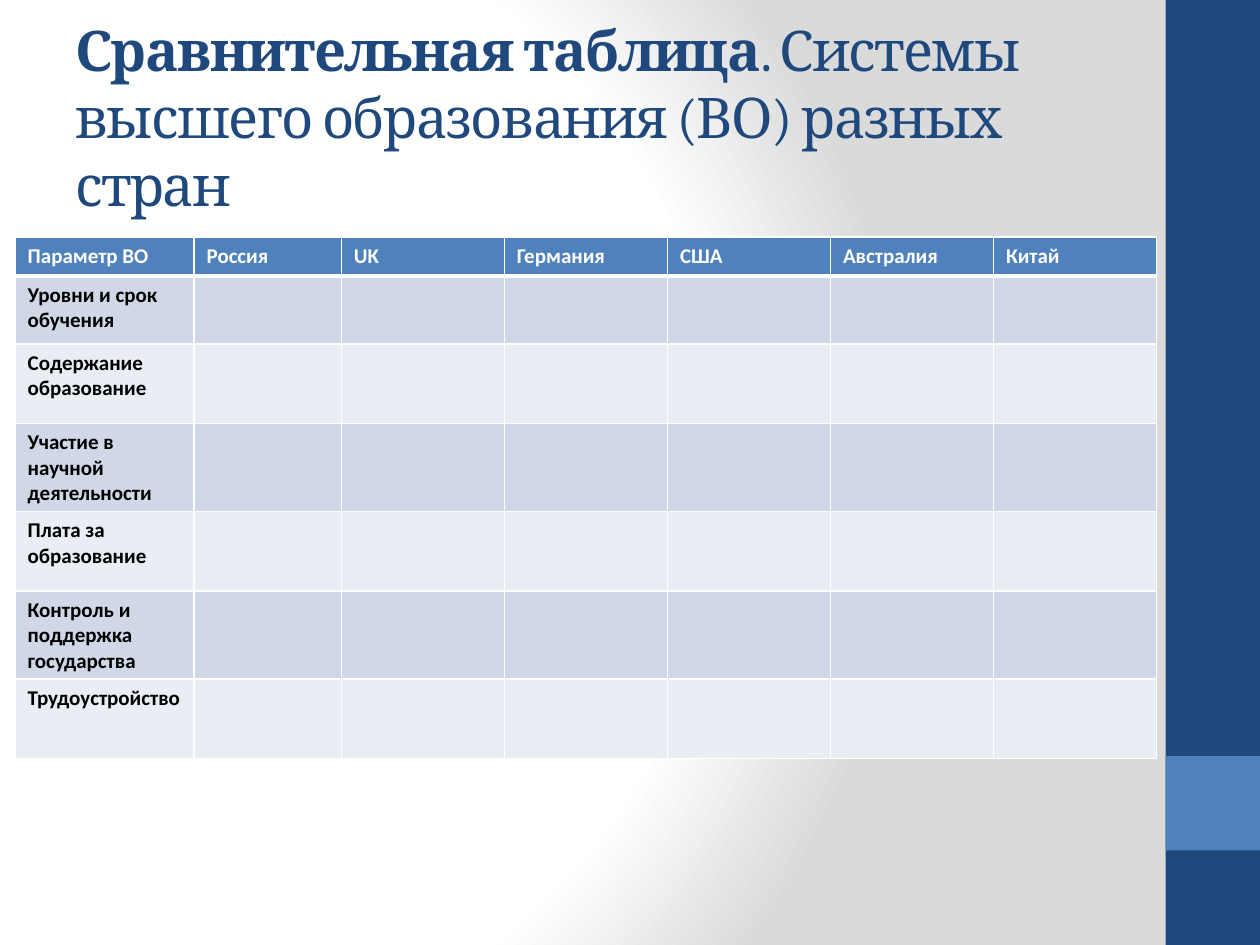
from dataclasses import dataclass

from lxml import etree
from pptx import Presentation
from pptx.dml.color import RGBColor
from pptx.enum.shapes import MSO_SHAPE
from pptx.enum.text import MSO_ANCHOR
from pptx.oxml import parse_xml
from pptx.oxml.ns import nsdecls, qn
from pptx.slide import Slide
from pptx.table import _Cell
from pptx.text.text import _Paragraph, _Run
from pptx.util import Inches, Pt

RECTANGLE = MSO_SHAPE.RECTANGLE
MIDDLE = MSO_ANCHOR.MIDDLE

SLIDE_WIDTH, SLIDE_HEIGHT = Inches(10), Inches(7.5)
COLORS = {
    "navy": "1F497D",
    "blue": "4F81BD",
    "white": "FFFFFF",
    "black": "000000",
    "gray": "DADADA",
    "band_dark": "D0D8E8",
    "band_light": "E9EDF4",
}
COUNTRIES = ["Россия", "UK", "Германия", "США", "Австралия", "Китай"]
PARAMETERS = [
    "Уровни и срок обучения",
    "Содержание образование",
    "Участие в научной деятельности",
    "Плата за образование",
    "Контроль и поддержка государства",
    "Трудоустройство",
]
TABLE_WIDTH = 9.06
PARAMETER_WIDTH, RUSSIA_WIDTH = 1.42, 1.17
OTHER_COUNTRIES = len(COUNTRIES) - 1
COUNTRY_WIDTH = (TABLE_WIDTH - PARAMETER_WIDTH - RUSSIA_WIDTH) / OTHER_COUNTRIES
COLUMN_WIDTHS = [PARAMETER_WIDTH, RUSSIA_WIDTH] + [COUNTRY_WIDTH] * OTHER_COUNTRIES
ROW_HEIGHTS = [0.31, 0.54] + [0.63] * (len(PARAMETERS) - 1)


@dataclass(frozen=True)
class Panel:
    left: float
    top: float
    width: float
    height: float
    color: str


@dataclass(frozen=True)
class TextStyle:
    font: str
    size: float
    color: str
    bold: bool


SIDEBAR = [
    Panel(0.925, 0, 0.075, 1, "navy"),
    Panel(0.925, 0.8, 0.075, 0.1, "blue"),
]
HEADING = TextStyle("Cambria", 32, "navy", True)
SUBHEADING = TextStyle("Cambria", 32, "navy", False)
COLUMN_LABEL = TextStyle("Calibri", 12, "white", True)
ROW_LABEL = TextStyle("Calibri", 12, "black", True)


def rgb(color: str) -> RGBColor:
    return RGBColor.from_string(COLORS[color])


def add_run(paragraph: _Paragraph, text: str, style: TextStyle) -> _Run:
    run = paragraph.add_run()
    run.text = text
    run.font.name = style.font
    run.font.size = Pt(style.size)
    run.font.bold = style.bold
    run.font.color.rgb = rgb(style.color)
    return run


def paint_background(slide: Slide) -> None:
    stops = "".join(
        f'<a:gs pos="{share * 1000}"><a:srgbClr val="{COLORS[color]}"/></a:gs>'
        for share, color in [(0, "white"), (75, "white"), (100, "gray")]
    )
    background = parse_xml(
        f'<p:bg {nsdecls("p", "a")}><p:bgPr><a:gradFill rotWithShape="1">'
        f"<a:gsLst>{stops}</a:gsLst>"
        '<a:path path="circle"><a:fillToRect l="20000" t="50000" r="100000" b="50000"/>'
        "</a:path></a:gradFill><a:effectLst/></p:bgPr></p:bg>"
    )
    slide.element.cSld.insert(0, background)


def draw_panel(slide: Slide, panel: Panel) -> None:
    rectangle = slide.shapes.add_shape(
        RECTANGLE,
        int(panel.left * SLIDE_WIDTH),
        int(panel.top * SLIDE_HEIGHT),
        int(panel.width * SLIDE_WIDTH),
        int(panel.height * SLIDE_HEIGHT),
    )
    rectangle.shadow.inherit = False
    rectangle.fill.solid()
    rectangle.fill.fore_color.rgb = rgb(panel.color)
    rectangle.line.fill.background()


def draw_title(slide: Slide) -> None:
    title = slide.shapes.add_textbox(Inches(0.5), Inches(0.3), Inches(8.33), Inches(1.25))
    frame = title.text_frame
    frame.word_wrap = True
    frame.vertical_anchor = MIDDLE
    paragraph = frame.paragraphs[0]
    for text, style in [
        ("Сравнительная таблица", HEADING),
        (". Системы высшего образования (ВО) разных стран", SUBHEADING),
    ]:
        run = add_run(paragraph, text, style)
        run.font._element.set("spc", "-100")


def set_borders(cell: _Cell, top: float, bottom: float) -> None:
    properties = cell._tc.get_or_add_tcPr()
    widths = {"a:lnL": 1, "a:lnR": 1, "a:lnT": top, "a:lnB": bottom}
    for position, (side, width) in enumerate(widths.items()):
        border = etree.Element(qn(side), w=str(Pt(width)))
        fill = etree.SubElement(border, qn("a:solidFill"))
        etree.SubElement(fill, qn("a:srgbClr"), val=COLORS["white"])
        properties.insert(position, border)


def draw_comparison(slide: Slide) -> None:
    rows = [["Параметр ВО", *COUNTRIES]]
    rows += [[parameter] + [""] * len(COUNTRIES) for parameter in PARAMETERS]
    table = slide.shapes.add_table(
        len(rows), len(COLUMN_WIDTHS), Inches(0.12), Inches(1.88),
        Inches(TABLE_WIDTH), Inches(sum(ROW_HEIGHTS)),
    ).table
    for column, width in zip(table.columns, COLUMN_WIDTHS):
        column.width = Inches(width)
    for row, height in zip(table.rows, ROW_HEIGHTS):
        row.height = Inches(height)
    for row_index, labels in enumerate(rows):
        is_header = row_index == 0
        band = "band_dark" if row_index % 2 else "band_light"
        for column_index, label in enumerate(labels):
            cell = table.cell(row_index, column_index)
            cell.fill.solid()
            cell.fill.fore_color.rgb = rgb("blue" if is_header else band)
            set_borders(cell, 3 if row_index == 1 else 1, 3 if is_header else 1)
            if label:
                style = COLUMN_LABEL if is_header else ROW_LABEL
                add_run(cell.text_frame.paragraphs[0], label, style)


def main() -> None:
    presentation = Presentation()
    presentation.slide_width = SLIDE_WIDTH
    presentation.slide_height = SLIDE_HEIGHT
    slide = presentation.slides.add_slide(presentation.slide_layouts[6])
    paint_background(slide)
    for panel in SIDEBAR:
        draw_panel(slide, panel)
    draw_title(slide)
    draw_comparison(slide)
    presentation.save("out.pptx")


if __name__ == "__main__":
    main()
